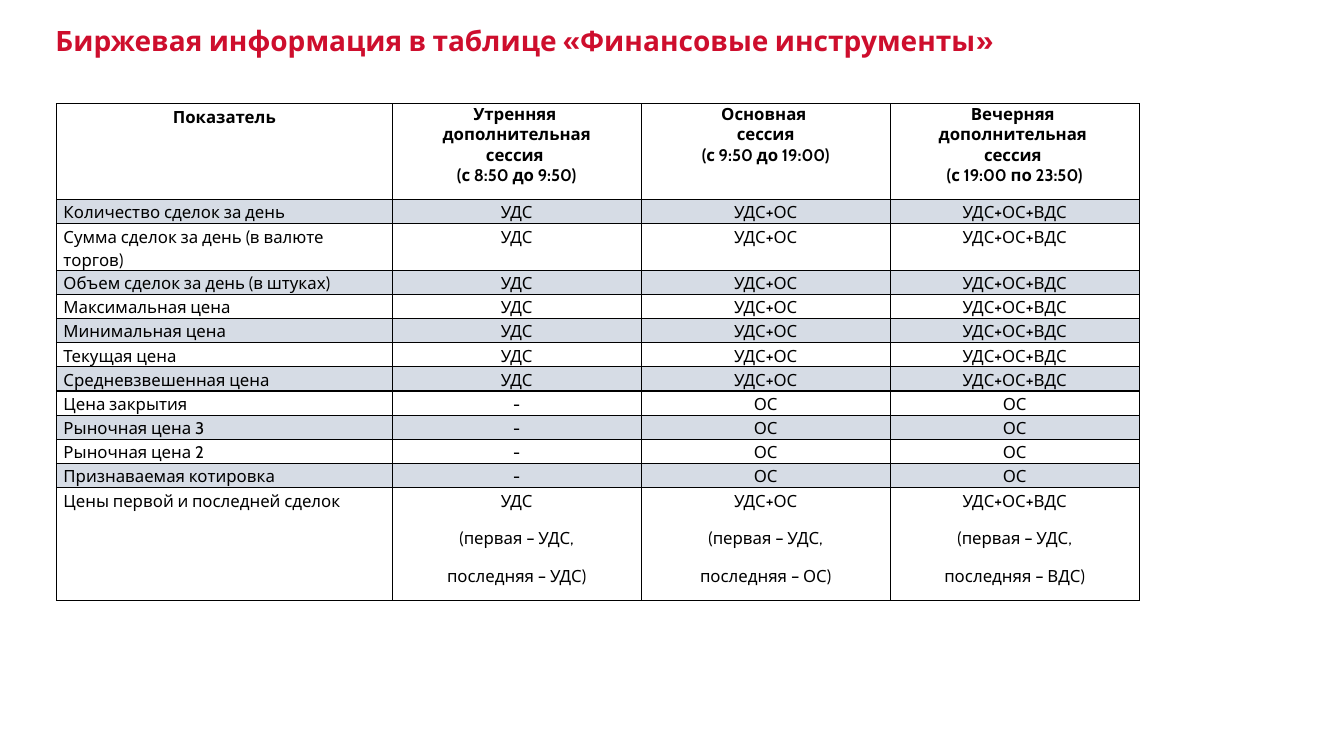
from lxml.etree import SubElement
from pptx import Presentation
from pptx.dml.color import RGBColor
from pptx.enum.text import MSO_ANCHOR, PP_ALIGN
from pptx.oxml.ns import qn
from pptx.util import Inches, Pt

FONT = "Cabin"
BLACK, RED, BAND = "000000", "CE0E2D", "D6DCE5"
TITLE = "Биржевая информация в таблице «Финансовые инструменты»"
HEADERS = [
    ["Показатель"],
    ["Утренняя \nдополнительная\nсессия ", "(с 8:50 до 9:50)"],
    ["Основная \nсессия", "(с 9:50 до 19:00)"],
    ["Вечерняя \nдополнительная \nсессия ", "(с 19:00 по 23:50)"],
]
SESSIONS = ["УДС", "УДС+ОС", "УДС+ОС+ВДС"]
CLOSING = ["-", "ОС", "ОС"]
INDICATORS = [
    ("Количество сделок за день", SESSIONS),
    ("Сумма сделок за день (в валюте торгов)", SESSIONS),
    ("Объем сделок за день (в штуках)", SESSIONS),
    ("Максимальная цена", SESSIONS),
    ("Минимальная цена", SESSIONS),
    ("Текущая цена", SESSIONS),
    ("Средневзвешенная цена", SESSIONS),
    ("Цена закрытия", CLOSING),
    ("Рыночная цена 3", CLOSING),
    ("Рыночная цена 2", CLOSING),
    ("Признаваемая котировка", CLOSING),
]
LAST_ROW = [["Цены первой и последней сделок"]] + [
    [session, "(первая – УДС,", f"последняя – {session.split('+')[-1]})"]
    for session in SESSIONS
]
ROWS = [HEADERS] + [[[name]] + [[v] for v in values] for name, values in INDICATORS] + [LAST_ROW]
COL_WIDTHS = [3.33] + [2.47] * 3
ROW_HEIGHTS = [0.95] + [0.24] * len(INDICATORS) + [1.12]
TIGHT = {"space_before": Pt(0), "space_after": Pt(0), "line_spacing": 1.0}
LOOSE = {"space_before": Pt(0), "space_after": Pt(10), "line_spacing": 1.15}


def color(value):
    """Turn a hex string into a colour."""
    return RGBColor.from_string(value)


def apply(obj, formats):
    """Set every attribute named in a dict."""
    for name, value in formats.items():
        setattr(obj, name, value)


def write(tf, lines, size, hue, bold, layout):
    """Fill a text frame with one paragraph for each line."""
    for i, line in enumerate(lines):
        p = tf.paragraphs[0] if i == 0 else tf.add_paragraph()
        p.text = line
        apply(p, layout)
        for r in p.runs:
            apply(r.font, {"name": FONT, "size": Pt(size), "bold": bold})
            r.font.color.rgb = color(hue)


def add_borders(cell, width=1):
    """Draw a black line on all four sides of a cell."""
    tc_pr = cell._tc.get_or_add_tcPr()
    for i, side in enumerate(("lnL", "lnR", "lnT", "lnB")):
        ln = tc_pr.makeelement(qn(f"a:{side}"), {"w": str(Pt(width))})
        SubElement(SubElement(ln, qn("a:solidFill")), qn("a:srgbClr"), val=BLACK)
        tc_pr.insert(i, ln)


def add_title(s, left, top, width, height):
    """Place the slide heading in the given box."""
    tf = s.shapes.add_textbox(*map(Inches, (left, top, width, height))).text_frame
    margins = dict.fromkeys(("margin_left", "margin_top", "margin_right", "margin_bottom"), 0)
    apply(tf, {"word_wrap": True, **margins})
    write(tf, [TITLE], 20, RED, True, {"line_spacing": Pt(20), "space_before": Pt(1)})


def add_indicator_table(s, left, top):
    """Place the table of indicators by trading session."""
    box = map(Inches, (left, top, sum(COL_WIDTHS), sum(ROW_HEIGHTS)))
    table = s.shapes.add_table(len(ROWS), len(COL_WIDTHS), *box).table
    apply(table, {"first_row": False, "horz_banding": False})
    for column, width in zip(table.columns, COL_WIDTHS):
        column.width = Inches(width)
    for i, (row, height) in enumerate(zip(table.rows, ROW_HEIGHTS)):
        row.height = Inches(height)
        for j, (cell, lines) in enumerate(zip(row.cells, ROWS[i])):
            apply(cell, {"margin_left": Inches(0.07), "margin_right": Inches(0.07),
                         "margin_top": 0, "margin_bottom": 0,
                         "vertical_anchor": MSO_ANCHOR.TOP})
            if i % 2:
                cell.fill.solid()
                cell.fill.fore_color.rgb = color(BAND)
            else:
                cell.fill.background()
            add_borders(cell)
            centred = i == 0 or j > 0
            layout = TIGHT if i == 0 and j > 0 else LOOSE
            align = PP_ALIGN.CENTER if centred else PP_ALIGN.LEFT
            write(cell.text_frame, lines, 12, BLACK, i == 0, {**layout, "alignment": align})


def main():
    """Build and save the slide."""
    prs = Presentation()
    apply(prs, {"slide_width": Inches(13.33), "slide_height": Inches(7.5)})
    s = prs.slides.add_slide(prs.slide_layouts[6])
    add_title(s, 0.55, 0.29, 11.92, 0.28)
    add_indicator_table(s, 0.56, 1.03)
    prs.save("out.pptx")


if __name__ == "__main__":
    main()
